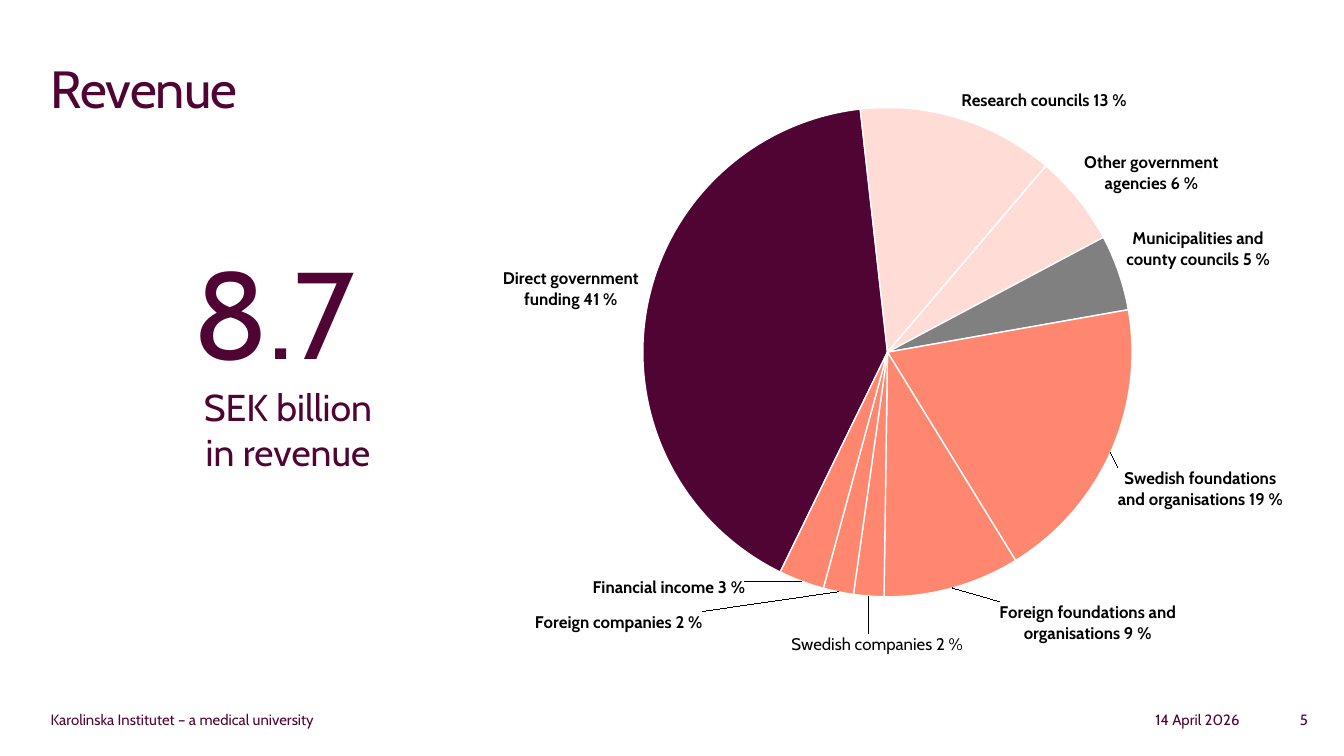
import pptx
import pptx.chart.data
import pptx.dml.color
import pptx.enum.chart
import pptx.enum.text
import pptx.oxml
import pptx.oxml.ns
import pptx.util

Pt = pptx.util.Pt
RGB = pptx.dml.color.RGBColor.from_string
ALIGN = pptx.enum.text.PP_ALIGN
THEME = {
    "font": "Cabin",
    "plum": "4F0433", "blush": "FFDDD6", "grey": "808080", "coral": "FF876F",
    "black": "000000", "white": "FFFFFF",
    "title": 28, "figure": 66, "unit": 20, "label": 9, "footer": 8,
}


def add_text(p, text, size, color="plum", bold=None, align=None, spacing=None):
    if align is not None:
        p.alignment = align
    r = p.add_run()
    r.text = text
    r.font.name = THEME["font"]
    r.font.size = Pt(THEME[size])
    r.font.color.rgb = RGB(THEME[color])
    r.font.bold = bold
    if spacing is not None:
        r._r.get_or_add_rPr().set("spc", str(spacing))


def layout_xml(**values):
    items = "".join(f'<c:{k} val="{v}"/>' for k, v in values.items())
    return pptx.oxml.parse_xml(
        f'<c:layout {pptx.oxml.ns.nsdecls("c")}><c:manualLayout>{items}</c:manualLayout></c:layout>')


prs = pptx.Presentation()
prs.slide_width, prs.slide_height = Pt(720), Pt(405)
s = prs.slides.add_slide(prs.slide_layouts[5])

title = s.shapes.title
title.left, title.top, title.width, title.height = Pt(20), Pt(26.6), Pt(680), Pt(68)
tf = title.text_frame
tf.vertical_anchor = pptx.enum.text.MSO_ANCHOR.TOP
tf.auto_size = pptx.enum.text.MSO_AUTO_SIZE.NONE
add_text(tf.paragraphs[0], "Revenue", "title", align=ALIGN.LEFT, spacing=-50)

tf = s.shapes.add_textbox(Pt(22.3), Pt(123), Pt(264), Pt(135.4)).text_frame
tf.word_wrap = True
p = tf.paragraphs[0]
add_text(p, "8.7 ", "figure", align=ALIGN.CENTER)
p.add_line_break()
add_text(p, "SEK billion", "unit")
add_text(tf.add_paragraph(), "in revenue", "unit", align=ALIGN.CENTER)

for text, left, width, align in [
    ("Karolinska Institutet – a medical university", 20, 204, ALIGN.LEFT),
    ("14 April 2026", 521.3, 150, ALIGN.RIGHT),
    ("5", 653.8, 54, ALIGN.RIGHT),
]:
    tf = s.shapes.add_textbox(Pt(left), Pt(377.3), Pt(width), Pt(13.7)).text_frame
    tf.word_wrap = True
    add_text(tf.paragraphs[0], text, "footer", align=align)

slices = [
    ("Direct government funding 41 %", 41, "plum", None),
    ("Research councils 13 %", 13, "blush", None),
    ("Other government agencies 6 %", 6, "blush", None),
    ("Municipalities and county councils 5 %", 5, "grey", None),
    ("Swedish foundations and organisations 19 %", 19, "coral", (0, 0.02)),
    ("Foreign foundations and organisations 9 %", 9, "coral", (0.05, 0.01)),
    ("Swedisch companies 2 %", 2, "coral", (0.01, 0.05)),
    ("Foreign companies 2 %", 2, "coral", (-0.15, 0.02)),
    ("Financial income 3 %", 3, "coral", (-0.06, -0.02)),
]
custom_labels = {6: "Swedish companies 2 %"}

data = pptx.chart.data.CategoryChartData()
data.categories = [name for name, *_ in slices]
data.add_series("Series 1", [value for _, value, *_ in slices])
chart = s.shapes.add_chart(
    pptx.enum.chart.XL_CHART_TYPE.PIE, Pt(242.6), Pt(35.3), Pt(480.2), Pt(319.7), data).chart
chart.has_title = False
chart.has_legend = False
chart.font.name = THEME["font"]
chart.font.size = Pt(10)
chart.font.color.rgb = RGB(THEME["black"])

plot = chart.plots[0]
plot.vary_by_categories = True
pie = plot._element
angle = pptx.oxml.parse_xml(f'<c:firstSliceAng {pptx.oxml.ns.nsdecls("c")} val="206"/>')
pie.append(angle)
area = pie.getparent()
for old in area.xpath("c:layout"):
    area.remove(old)
area.insert(0, layout_xml(layoutTarget="inner", xMode="edge", yMode="edge",
                          x=0.21, y=0.07, w=0.55, h=0.82))

outside = pptx.enum.chart.XL_LABEL_POSITION.OUTSIDE_END
series = plot.series[0]
labels = series.data_labels
labels.show_value = False
labels.show_category_name = True
labels.position = outside
fonts = [labels.font]

for i, (name, value, color, offset) in enumerate(slices):
    point = series.points[i]
    point.format.fill.solid()
    point.format.fill.fore_color.rgb = RGB(THEME[color])
    point.format.line.color.rgb = RGB(THEME["white"])
    point.format.line.width = Pt(0.75)
    if offset is None:
        continue
    label = point.data_label
    label.position = outside
    if i in custom_labels:
        add_text(label.text_frame.paragraphs[0], custom_labels[i], "label", "black", bold=False)
    else:
        fonts.append(label.font)
    node = series._element.xpath(f"c:dLbls/c:dLbl[c:idx/@val='{i}']")[0]
    node.insert(1, layout_xml(x=offset[0], y=offset[1]))
    node.xpath("c:showVal")[0].set("val", "0")
    node.xpath("c:showCatName")[0].set("val", "1")

for font in fonts:
    font.name = THEME["font"]
    font.size = Pt(THEME["label"])
    font.bold = True
    font.color.rgb = RGB(THEME["black"])

prs.save("out.pptx")
